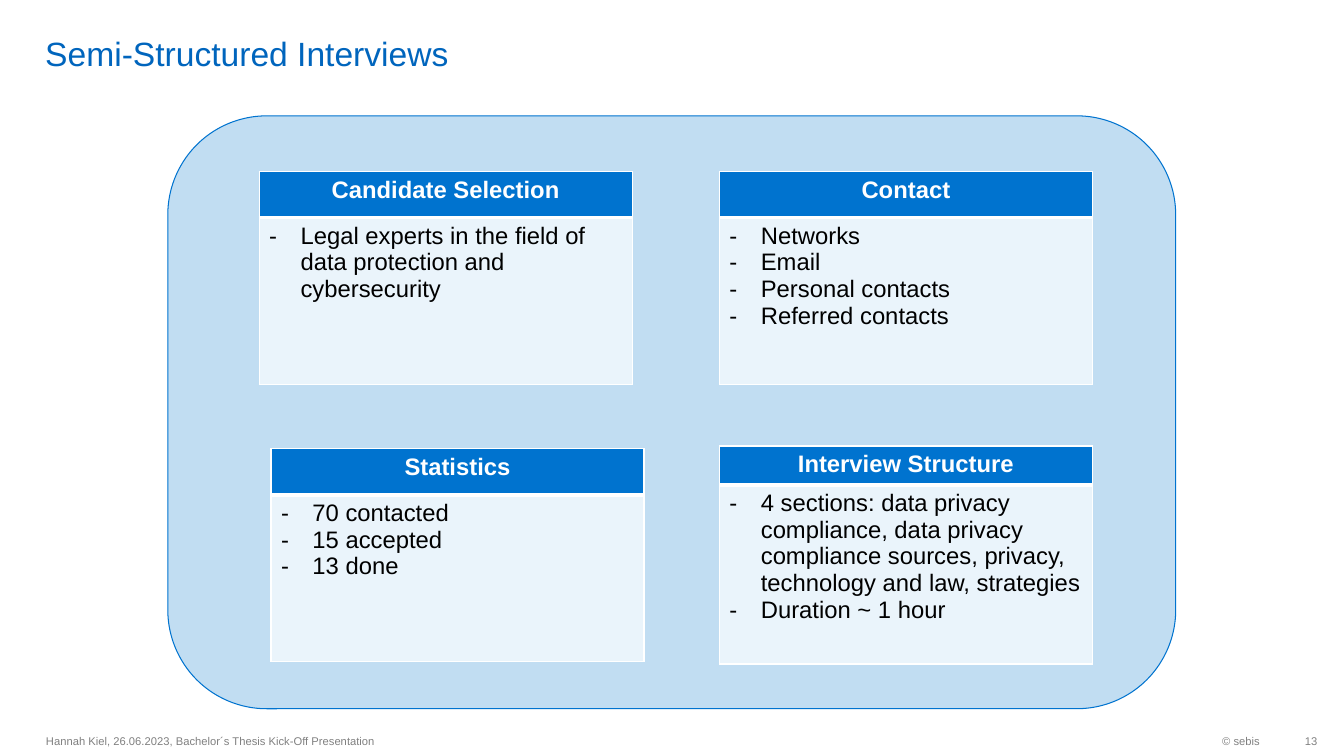
from lxml import etree
from pptx import Presentation
from pptx.dml.color import RGBColor
from pptx.enum.shapes import MSO_SHAPE
from pptx.enum.text import MSO_ANCHOR, PP_ALIGN
from pptx.oxml.ns import qn
from pptx.util import Cm, Pt

ROUNDED = MSO_SHAPE.ROUNDED_RECTANGLE
MIDDLE, BOTTOM = MSO_ANCHOR.MIDDLE, MSO_ANCHOR.BOTTOM
LEFT, CENTER, RIGHT = PP_ALIGN.LEFT, PP_ALIGN.CENTER, PP_ALIGN.RIGHT

FONT = "Arial"
COLORS = {
    "title": "0065BD",
    "footer": "808080",
    "panel": "C1DDF2",
    "accent": "0073CF",
    "body": "EAF4FB",
    "white": "FFFFFF",
    "black": "000000",
}
CARD_WIDTH = 9.4
LEFT_COLUMN, RIGHT_COLUMN = 6.53, 18.13
TOP_ROW = 4.32
HEADER_HEIGHT, BODY_HEIGHT = 1.16, 4.2
CARDS = [
    (LEFT_COLUMN, TOP_ROW, HEADER_HEIGHT, BODY_HEIGHT, "Candidate Selection",
     ["Legal experts in the field of data protection and cybersecurity"]),
    (6.83, 11.31, HEADER_HEIGHT, BODY_HEIGHT, "Statistics",
     ["70 contacted", "15 accepted", "13 done"]),
    (RIGHT_COLUMN, 11.24, 0.93, 4.52, "Interview Structure",
     ["4 sections: data privacy compliance, data privacy compliance sources, "
      "privacy, technology and law, strategies",
      "Duration ~ 1 hour"]),
    (RIGHT_COLUMN, TOP_ROW, HEADER_HEIGHT, BODY_HEIGHT, "Contact",
     ["Networks", "Email", "Personal contacts", "Referred contacts"]),
]


def color(name):
    return RGBColor.from_string(COLORS[name])


def format_paragraph(para, size, color_name, align=LEFT, bold=False):
    para.alignment = align
    for span in para.runs:
        span.font.name = FONT
        span.font.size = Pt(size)
        span.font.bold = bold
        span.font.color.rgb = color(color_name)


def set_title(page, text):
    title = page.shapes.title
    title.left, title.top = Cm(0.89), Cm(-0.15)
    title.width, title.height = Cm(29.41), Cm(2)
    frame = title.text_frame
    frame.text = text
    frame.vertical_anchor = BOTTOM
    frame.margin_left = frame.margin_right = Cm(0.25)
    frame.margin_top = frame.margin_bottom = 0
    format_paragraph(frame.paragraphs[0], 24, "title")


def add_footer(page, left, width, text, align=LEFT, right_margin=0.25):
    box = page.shapes.add_textbox(Cm(left), Cm(18.26), Cm(width), Cm(0.81))
    frame = box.text_frame
    frame.text = text
    frame.word_wrap = True
    frame.vertical_anchor = MIDDLE
    frame.margin_right = Cm(right_margin)
    format_paragraph(frame.paragraphs[0], 8, "footer", align)


def add_panel(page):
    panel = page.shapes.add_shape(ROUNDED, Cm(4.23), Cm(2.92), Cm(25.4), Cm(14.94))
    panel.shadow.inherit = False
    panel.fill.solid()
    panel.fill.fore_color.rgb = color("panel")
    panel.line.color.rgb = color("accent")
    panel.line.width = Pt(0.75)


def set_borders(cell, widths):
    properties = cell._tc.get_or_add_tcPr()
    for position, (side, width) in enumerate(widths.items()):
        line = etree.Element(qn(f"a:{side}"), w=str(Pt(width)))
        fill = etree.SubElement(line, qn("a:solidFill"))
        etree.SubElement(fill, qn("a:srgbClr"), val=COLORS["white"])
        properties.insert(position, line)


def fill_cell(cell, color_name, top_width, bottom_width):
    cell.fill.solid()
    cell.fill.fore_color.rgb = color(color_name)
    set_borders(cell, {"lnL": 1, "lnR": 1, "lnT": top_width, "lnB": bottom_width})


def add_dash(para):
    properties = para._p.get_or_add_pPr()
    properties.set("marL", str(Cm(0.79)))
    properties.set("indent", str(Cm(-0.79)))
    etree.SubElement(properties, qn("a:buFont"), typeface=FONT)
    etree.SubElement(properties, qn("a:buChar"), char="-")


def add_card(page, left, top, header_height, body_height, heading, items):
    frame = page.shapes.add_table(2, 1, Cm(left), Cm(top), Cm(CARD_WIDTH),
                                  Cm(header_height + body_height))
    table = frame.table
    table.rows[0].height = Cm(header_height)
    table.rows[1].height = Cm(body_height)
    header, body = table.cell(0, 0), table.cell(1, 0)
    fill_cell(header, "accent", 1, 3)
    fill_cell(body, "body", 3, 1)
    header.text_frame.text = heading
    format_paragraph(header.text_frame.paragraphs[0], 17, "white", CENTER, True)
    body.text_frame.text = "\n".join(items)
    for para in body.text_frame.paragraphs:
        add_dash(para)
        format_paragraph(para, 17, "black")


def main():
    deck = Presentation()
    deck.slide_width, deck.slide_height = Cm(33.87), Cm(19.05)
    page = deck.slides.add_slide(deck.slide_layouts[5])
    set_title(page, "Semi-Structured Interviews")
    add_footer(page, 26.06, 5.94, "© sebis", RIGHT)
    add_footer(page, 0.91, 16, "Hannah Kiel, 26.06.2023, Bachelor´s Thesis Kick-Off Presentation")
    add_footer(page, 32, 1.2, "13", RIGHT, 0)
    add_panel(page)
    for card in CARDS:
        add_card(page, *card)
    deck.save("out.pptx")


if __name__ == "__main__":
    main()
